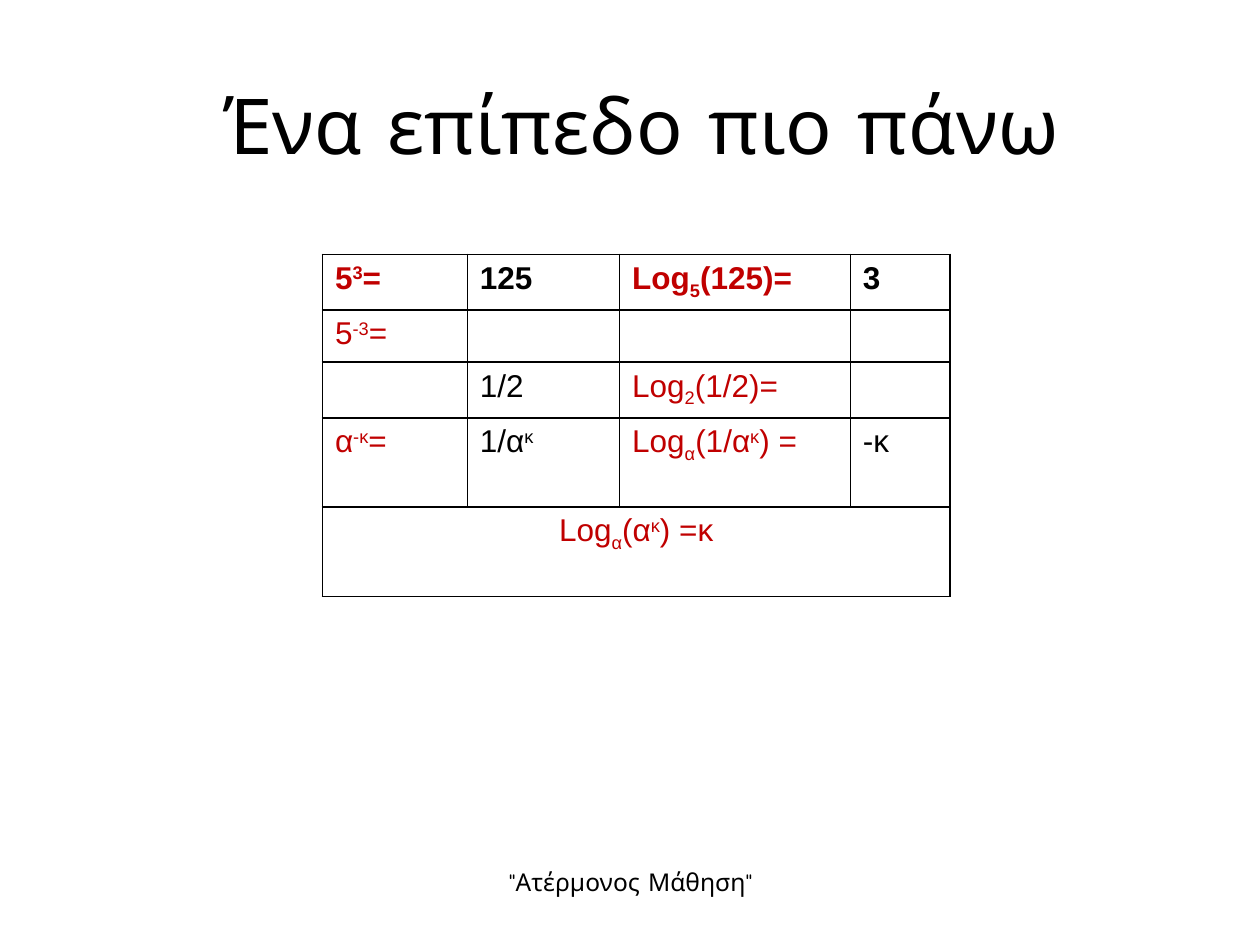
import pptx
import pptx.dml.color
import pptx.enum.text
import pptx.oxml
import pptx.oxml.ns
import pptx.util
from pptx.util import Cm

BLACK = pptx.dml.color.RGBColor(0x00, 0x00, 0x00)
RED = pptx.dml.color.RGBColor(0xC0, 0x00, 0x00)
WHITE = pptx.dml.color.RGBColor(0xFF, 0xFF, 0xFF)

BASELINES = {"^": "30000", "_": "-25000"}
COLUMN_WIDTHS = [2.92, 3.07, 4.65, 2.01]
ROW_HEIGHTS = [1.05, 1.05, 1.05, 1.8, 1.8]
COLUMN_COLORS = [RED, BLACK, RED, BLACK]
VEILED_ROWS = (1, 3)
FORMULAS = [
    ["5|^3|=", "125", "Log|_5|(125)=", "3"],
    ["5|^-3|=", "", "", ""],
    ["", "1/2", "Log|_2|(1/2)=", ""],
    ["α|^-κ|=", "1/α|^κ", "Log|_α|(1/α|^κ|) =", "-κ"],
    ["Log|_α|(α|^κ|) =κ", "", "", ""],
]


class LessonSlide:
    """Holds the fonts of the lesson and the slide being filled."""

    heading_font = "Comic Neue"
    formula_font = "Arial"

    def __init__(self, presentation):
        self.slide = presentation.slides.add_slide(presentation.slide_layouts[6])

    def style(self, font, name, size, color, bold=False):
        font.name = name
        font.size = pptx.util.Pt(size)
        font.color.rgb = color
        font.bold = bold

    def text(self, wording, left, top, width, height, size, anchor):
        frame = self.slide.shapes.add_textbox(
            Cm(left), Cm(top), Cm(width), Cm(height)).text_frame
        frame.word_wrap = True
        frame.vertical_anchor = anchor
        frame.text = wording
        line = frame.paragraphs[0]
        line.alignment = pptx.enum.text.PP_ALIGN.CENTER
        self.style(line.runs[0].font, self.heading_font, size, BLACK)

    def formula(self, cell, markup, color, bold):
        line = cell.text_frame.paragraphs[0]
        for part in filter(None, markup.split("|")):
            baseline = BASELINES.get(part[0])
            run = line.add_run()
            run.text = part[1:] if baseline else part
            self.style(run.font, self.formula_font, 18, color, bold)
            if baseline:
                run.font._element.set("baseline", baseline)

    def borders(self, cell):
        properties = cell._tc.get_or_add_tcPr()
        for side in "LRTB":
            properties.append(pptx.oxml.parse_xml(
                f'<a:ln{side} {pptx.oxml.ns.nsdecls("a")} w="12700"><a:solidFill>'
                f'<a:srgbClr val="{BLACK}"/></a:solidFill></a:ln{side}>'))

    def veil(self, cell):
        cell.fill.solid()
        cell.fill.fore_color.rgb = WHITE
        white = cell._tc.tcPr.find(pptx.oxml.ns.qn("a:solidFill"))[0]
        white.append(pptx.oxml.parse_xml(
            f'<a:alpha {pptx.oxml.ns.nsdecls("a")} val="20000"/>'))

    def formula_table(self, left, top):
        table = self.slide.shapes.add_table(
            len(ROW_HEIGHTS), len(COLUMN_WIDTHS), Cm(left), Cm(top),
            Cm(sum(COLUMN_WIDTHS)), Cm(sum(ROW_HEIGHTS))).table
        table.first_row = False
        table.horz_banding = False
        for column, width in zip(table.columns, COLUMN_WIDTHS):
            column.width = Cm(width)
        for r, (height, formulas) in enumerate(zip(ROW_HEIGHTS, FORMULAS)):
            table.rows[r].height = Cm(height)
            for c, (markup, color) in enumerate(zip(formulas, COLUMN_COLORS)):
                cell = table.cell(r, c)
                self.formula(cell, markup, color, bold=r == 0)
                self.borders(cell)
                if r in VEILED_ROWS:
                    self.veil(cell)
                else:
                    cell.fill.background()
        last = len(ROW_HEIGHTS) - 1
        rule = table.cell(last, 0)
        rule.merge(table.cell(last, len(COLUMN_WIDTHS) - 1))
        rule.text_frame.paragraphs[0].alignment = pptx.enum.text.PP_ALIGN.CENTER


def main():
    presentation = pptx.Presentation()
    presentation.slide_width = Cm(25.4)
    presentation.slide_height = Cm(19.05)
    lesson = LessonSlide(presentation)
    anchors = pptx.enum.text.MSO_ANCHOR
    lesson.text("Ένα επίπεδο πιο πάνω", 1.5, 0.91, 22.86, 3.18, 44, anchors.MIDDLE)
    lesson.formula_table(6.5, 5.13)
    lesson.text('"Ατέρμονος Μάθηση"', 8.69, 17.35, 8.05, 1.32, 14, anchors.TOP)
    presentation.save("out.pptx")


if __name__ == "__main__":
    main()
